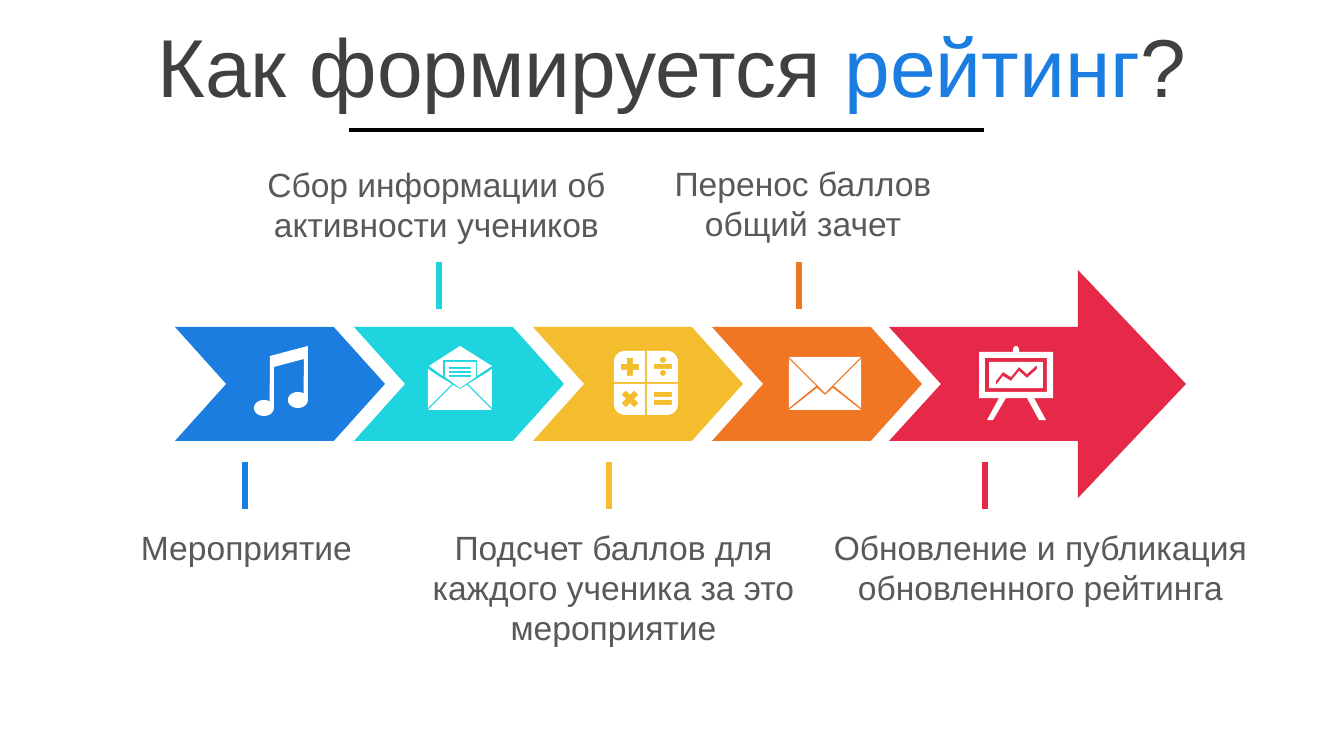
from dataclasses import dataclass
from math import cos, radians, sin

from lxml import etree
from pptx import Presentation
from pptx.dml.color import RGBColor
from pptx.enum.shapes import MSO_CONNECTOR, MSO_SHAPE
from pptx.enum.text import MSO_ANCHOR, MSO_AUTO_SIZE, PP_ALIGN
from pptx.oxml.ns import qn
from pptx.util import Pt

LINE = MSO_CONNECTOR.STRAIGHT
CHEVRON = MSO_SHAPE.CHEVRON
CENTER = PP_ALIGN.CENTER
MIDDLE = MSO_ANCHOR.MIDDLE
GROW = MSO_AUTO_SIZE.SHAPE_TO_FIT_TEXT
PX_PER_INCH = 134.4


@dataclass(frozen=True)
class Theme:
    font: str = "Arial"
    title_size: int = 44
    label_size: int = 18
    title: str = "404040"
    label: str = "595959"
    accent: str = "1C7DE1"
    rule: str = "000000"
    icon: str = "FFFFFF"
    steps: tuple = ("1C7DE1", "1ED4DE", "F4BD2D", "F07624", "E62949")


THEME = Theme()


def px(n):
    return round(n * 914400 / PX_PER_INCH)


def rgb(value):
    return RGBColor.from_string(value)


# Basic objects
def paint(shape, color):
    shape.shadow.inherit = False
    shape.fill.solid()
    shape.fill.fore_color.rgb = rgb(color)
    shape.line.fill.background()


def add_line(s, x1, y1, x2, y2, color, width):
    line = s.shapes.add_connector(LINE, px(x1), px(y1), px(x2), px(y2))
    line.line.color.rgb = rgb(color)
    line.line.width = Pt(width)
    etree.SubElement(line._element.spPr, qn("a:effectLst"))


def add_run(p, text, size, color):
    r = p.add_run()
    r.text = text
    r.font.name = THEME.font
    r.font.size = Pt(size)
    r.font.color.rgb = rgb(color)


def add_outline(s, left, top, contours, color):
    """Draw closed contours, given relative to left and top, as one shape."""
    builder = None
    for contour in contours:
        points = [(px(left + x), px(top + y)) for x, y in contour]
        if builder is None:
            builder = s.shapes.build_freeform(*points[0], scale=1.0)
        else:
            builder.move_to(*points[0])
        builder.add_line_segments(points[1:], close=True)
    paint(builder.convert_to_shape(), color)


# Contours
def rect(x1, y1, x2, y2):
    return [(x1, y1), (x2, y1), (x2, y2), (x1, y2)]


def arc(cx, cy, rx, ry, start, end):
    angles = [radians(start + (end - start) * i / 24) for i in range(25)]
    return [(cx + rx * cos(a), cy + ry * sin(a)) for a in angles]


def cross(cx, cy, arm, half, turn):
    c, n = cos(radians(turn)), sin(radians(turn))
    quarter = [(arm, -half), (arm, half), (half, half)]
    points = []
    for _ in range(4):
        points += quarter
        quarter = [(-y, x) for x, y in quarter]
    return [(cx + x * c - y * n, cy + x * n + y * c) for x, y in points]


# Icons
def music_note():
    return [[(54, 0)] + arc(44, 54, 10, 8, 0, 305) + [(50, 13), (20, 21)]
            + arc(10, 62, 10, 8, 0, 305) + [(16, 10)]]


def open_letter():
    return [
        [(25, 39), (32, 43), (39, 39), (64, 64), (0, 64)],
        [(0, 23), (12, 31), (24, 38), (0, 62)],
        [(64, 23), (64, 62), (40, 38), (60, 26)],
        [(32, 0), (64, 20), (49, 30), (49, 14), (15, 14), (15, 30), (1, 20)],
        [(17, 16), (48, 16), (48, 31), (32, 42), (17, 31)],
    ] + [rect(21, y, 43, y + 2) for y in (21, 25, 29)]


def calculator():
    key = arc(11, 11, 11, 11, 180, 270) + [(31, 0), (31, 31), (0, 31)]
    keys = [[(64 - x if flip_x else x, 64 - y if flip_y else y) for x, y in key]
            for flip_x in (False, True) for flip_y in (False, True)]
    signs = [cross(16, 16, 9, 3, 0), cross(16, 48, 9, 3, 45)]
    bars = [rect(40, y, 58, y + 5) for y in (13, 41, 49)]
    dots = [arc(49, y, 3, 3, 0, 345) for y in (9, 22)]
    return keys + signs + bars + dots


def closed_letter():
    return [
        [(44, 31), (72, 53), (0, 53), (28, 31), (36, 38)],
        [(72, 2), (72, 51), (45, 29)],
        [(0, 2), (27, 29), (0, 51)],
        [(0, 0), (72, 0), (36, 36)],
    ]


def board():
    frame = arc(37, 4, 3, 4, 180, 360) + [
        (40, 6), (74, 6), (74, 52), (55, 52), (67, 74), (60, 74), (48, 52),
        (27, 52), (14, 74), (8, 74), (20, 52), (0, 52), (0, 6), (34, 6)]
    trend = [(17, 37), (24, 28), (32, 33), (40, 23), (48, 30), (58, 21)]
    band = [(x, y - 2) for x, y in trend] + [(x, y + 2) for x, y in trend[::-1]]
    return [frame, rect(6, 12, 68, 46), rect(10, 16, 64, 42), band]


# Regions
def add_title(s, left, top, width, height):
    title = s.shapes.title
    title.left, title.top = px(left), px(top)
    title.width, title.height = px(width), px(height)
    tf = title.text_frame
    tf.vertical_anchor = MIDDLE
    p = tf.paragraphs[0]
    p.alignment = CENTER
    for text, color in (("Как формируется ", THEME.title),
                        ("рейтинг", THEME.accent), ("?", THEME.title)):
        add_run(p, text, THEME.title_size, color)
    add_line(s, left + 349, top + height, left + 984, top + height, THEME.rule, 2.25)


def add_arrow_band(s, left, top, height):
    step, width = 179, 210
    for i, color in enumerate(THEME.steps[:-1]):
        chevron = s.shapes.add_shape(
            CHEVRON, px(left + i * step), px(top), px(width), px(height))
        chevron.adjustments[0] = 0.449
        paint(chevron, color)
    # Final arrow with a notched tail
    mid, wing = height / 2, height / 2
    arrow = [(0, 0), (189, 0), (189, -wing), (297, mid), (189, height + wing),
             (189, height), (0, height), (52, mid)]
    add_outline(s, left + 714, top, [arrow], THEME.steps[-1])
    for x, y, contours in ((79, 19, music_note()), (253, 19, open_letter()),
                           (439, 24, calculator()), (614, 30, closed_letter()),
                           (804, 19, board())):
        add_outline(s, left + x, top + y, contours, THEME.icon)


def add_label(s, text, left, top, width, height):
    box = s.shapes.add_textbox(px(left), px(top), px(width), px(height))
    tf = box.text_frame
    tf.word_wrap = True
    tf.auto_size = GROW
    p = tf.paragraphs[0]
    p.alignment = CENTER
    add_run(p, text, THEME.label_size, THEME.label)


def add_labels(s, above, below):
    labels = (
        ("Мероприятие", 245, below, (122, 520, 249, 54)),
        ("Сбор информации об активности учеников", 439, above, (251, 157, 371, 95)),
        ("Подсчет баллов для каждого ученика за это мероприятие", 609, below,
         (407, 520, 413, 136)),
        ("Перенос баллов общий зачет", 799, above, (609, 156, 388, 95)),
        ("Обновление и публикация обновленного рейтинга", 985, below,
         (820, 520, 441, 95)),
    )
    for (text, x, y, box), color in zip(labels, THEME.steps):
        add_line(s, x, y, x, y + 47, color, 3)
        add_label(s, text, *box)


def main():
    prs = Presentation()
    prs.slide_width, prs.slide_height = px(1344), px(756)
    s = prs.slides.add_slide(prs.slide_layouts[5])
    add_title(s, 0, 0, 1344, 130)
    add_arrow_band(s, 175, 327, 114)
    add_labels(s, 262, 462)
    prs.save("out.pptx")


if __name__ == "__main__":
    main()
